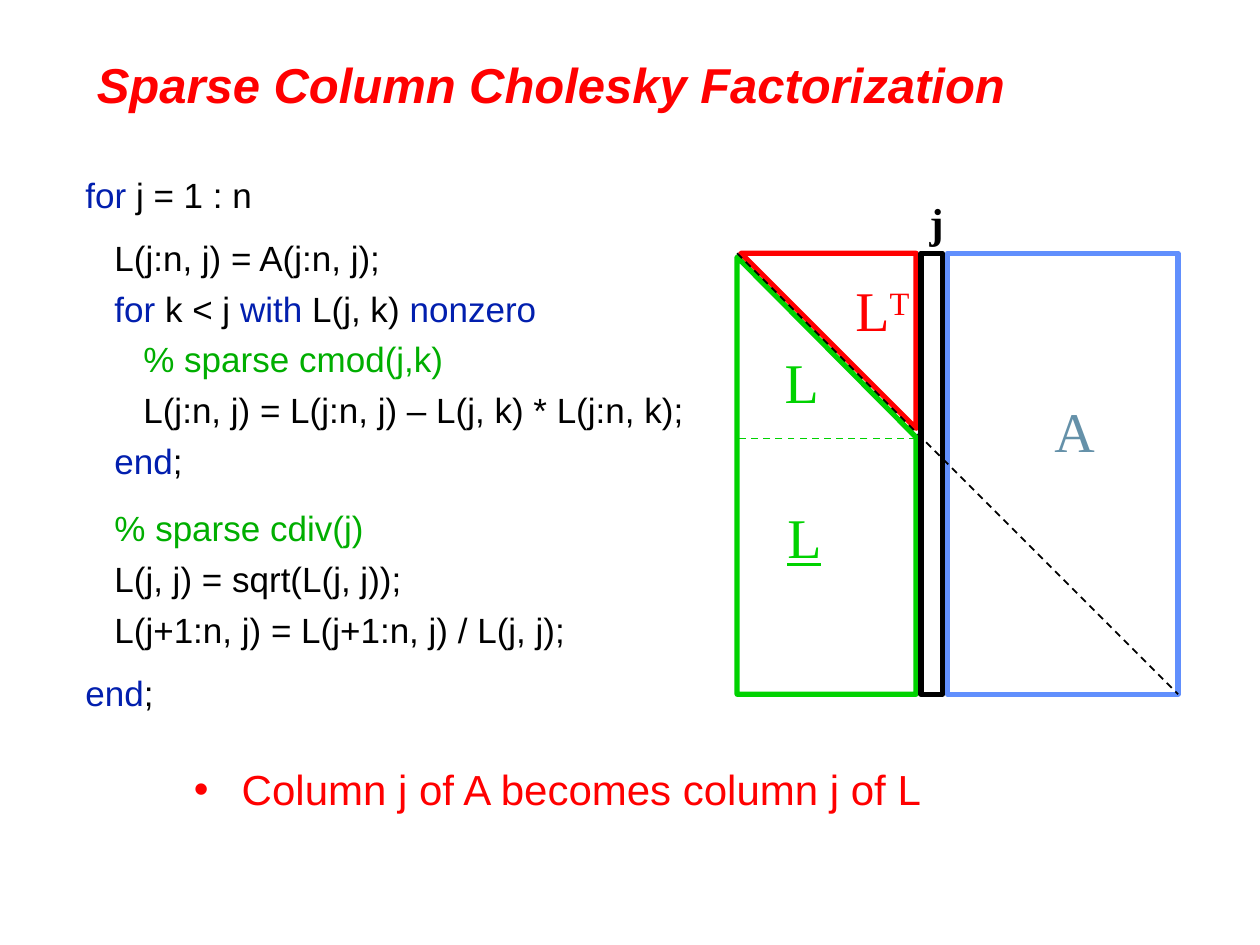
from dataclasses import dataclass

from lxml import etree
from pptx import Presentation
from pptx import util as u
from pptx.dml.color import RGBColor
from pptx.enum import dml, shapes, text
from pptx.oxml.ns import qn

# Grid of 100 columns by 75 rows; positions below are in these units.
WIDTH, HEIGHT = u.Inches(10), u.Inches(7.5)
COL, ROW = WIDTH // 100, HEIGHT // 75

BLACK, RED, BLUE = "000000", "FF0000", "021FAE"
COMMENT, GREEN, LIGHT_BLUE, GREY_BLUE = "00AE00", "00D200", "618FFD", "6591A9"
SANS, SERIF = "Arial", "Times New Roman"
INDENT = u.Inches(0.23)
HANGING = u.Inches(0.38)


@dataclass
class Run:
    text: str
    color: str = BLACK
    size: float = 20
    font: str = SANS
    bold: bool = False
    italic: bool = False
    underline: bool = False
    superscript: bool = False


@dataclass
class CodeLine:
    level: int
    runs: list[Run]
    before: float = 4.9


@dataclass
class Label:
    box: tuple[float, float, float, float]
    runs: list[Run]


def keyword(word: str) -> Run:
    return Run(word, BLUE)


def symbol(letter: str, color: str, **style) -> Run:
    return Run(letter, color, **{"size": 32, "font": SERIF, **style})


CODE = [
    CodeLine(0, [keyword("for"), Run(" j = 1 : n")], 3),
    CodeLine(1, [Run("L(j:n, j) = A(j:n, j);")], 12),
    CodeLine(1, [keyword("for"), Run(" k < j "), keyword("with"),
                 Run(" L(j, k) "), keyword("nonzero")]),
    CodeLine(2, [Run("% sparse cmod(j,k)", COMMENT)]),
    CodeLine(2, [Run("L(j:n, j) = L(j:n, j) – L(j, k) * L(j:n, k);")]),
    CodeLine(1, [keyword("end"), Run(";")]),
    CodeLine(1, [Run("% sparse cdiv(j)", COMMENT)], 14.7),
    CodeLine(1, [Run("L(j, j) = sqrt(L(j, j));")]),
    CodeLine(1, [Run("L(j+1:n, j) = L(j+1:n, j) / L(j, j);")]),
    CodeLine(0, [keyword("end"), Run(";")], 12),
]

LEFT, TOP, RIGHT, BOTTOM = 58.5, 20.1, 93.5, 55.1
FACTOR_RIGHT = 72.7

LABELS = [
    Label((61.5, 39.4, 4.7, 6.3), [symbol("L", GREEN, underline=True)]),
    Label((61.3, 27.1, 4.7, 6.3), [symbol("L", GREEN)]),
    Label((66.9, 21.4, 6.5, 6.3),
          [symbol("L", RED), symbol("T", RED, superscript=True)]),
    Label((82.7, 31, 5.2, 6.3), [symbol("A", GREY_BLUE)]),
    Label((72.8, 15.1, 3.1, 5), [symbol("j", BLACK, size=24, bold=True)]),
]


def rgb(color: str) -> RGBColor:
    return RGBColor.from_string(color)


def place(box: tuple[float, float, float, float]) -> list[int]:
    return [round(v * unit) for v, unit in zip(box, (COL, ROW, COL, ROW))]


def add_text_box(s, box, wrap: bool = True):
    tf = s.shapes.add_textbox(*place(box)).text_frame
    tf.word_wrap = wrap
    return tf


def fill_paragraph(p, runs: list[Run]) -> None:
    for item in runs:
        r = p.add_run()
        r.text = item.text
        f = r.font
        f.name, f.size = item.font, u.Pt(item.size)
        f.bold, f.italic, f.underline = item.bold, item.italic, item.underline
        f.color.rgb = rgb(item.color)
        if item.superscript:
            r._r.get_or_add_rPr().set("baseline", "30000")


def set_bullet(p, color: str) -> None:
    pPr = p._p.get_or_add_pPr()
    pPr.set("marL", str(HANGING))
    pPr.set("indent", str(-HANGING))
    bu_color = etree.SubElement(pPr, qn("a:buClr"))
    etree.SubElement(bu_color, qn("a:srgbClr")).set("val", color)
    etree.SubElement(pPr, qn("a:buFont")).set("typeface", SANS)
    etree.SubElement(pPr, qn("a:buChar")).set("char", "•")


def outline(sp, color: str) -> None:
    sp.shadow.inherit = False
    sp.fill.background()
    sp.line.color.rgb = rgb(color)
    sp.line.width = u.Pt(3)


def add_block(s, box, color: str) -> None:
    outline(s.shapes.add_shape(shapes.MSO_SHAPE.RECTANGLE, *place(box)), color)


def add_polygon(s, points: list[tuple[float, float]], color: str) -> None:
    start, *rest = [(round(x * COL), round(y * ROW)) for x, y in points]
    builder = s.shapes.build_freeform(*start)
    builder.add_line_segments(rest, close=True)
    outline(builder.convert_to_shape(), color)


def add_dashed_line(s, ends: tuple[float, float, float, float], color: str) -> None:
    line = s.shapes.add_connector(shapes.MSO_CONNECTOR.STRAIGHT, *place(ends))
    line.line.color.rgb = rgb(color)
    line.line.width = u.Pt(1)
    line.line.dash_style = dml.MSO_LINE.DASH
    etree.SubElement(line._element.spPr, qn("a:effectLst"))


def add_code(s) -> None:
    tf = add_text_box(s, (5.8, 13.3, 50, 51.7))
    for i, line in enumerate(CODE):
        p = tf.add_paragraph() if i else tf.paragraphs[0]
        p.space_before = u.Pt(line.before)
        p._p.get_or_add_pPr().set("marL", str(line.level * INDENT))
        fill_paragraph(p, line.runs)


def add_matrix(s) -> None:
    height = BOTTOM - TOP
    add_block(s, (75.2, TOP, RIGHT - 75.2, height), LIGHT_BLUE)
    add_polygon(s, [(LEFT, 20.4), (LEFT, BOTTOM), (FACTOR_RIGHT, BOTTOM),
                    (FACTOR_RIGHT, 34.7)], GREEN)
    add_polygon(s, [(58.8, TOP), (FACTOR_RIGHT, TOP), (FACTOR_RIGHT, 34)], RED)
    add_block(s, (73.1, TOP, 1.7, height), BLACK)
    add_dashed_line(s, (LEFT, TOP, RIGHT, BOTTOM), BLACK)
    add_dashed_line(s, (FACTOR_RIGHT, 34.8, LEFT, 34.8), GREEN)
    for label in LABELS:
        tf = add_text_box(s, label.box, wrap=False)
        tf.auto_size = text.MSO_AUTO_SIZE.SHAPE_TO_FIT_TEXT
        fill_paragraph(tf.paragraphs[0], label.runs)


def main() -> None:
    prs = Presentation()
    prs.slide_width, prs.slide_height = WIDTH, HEIGHT
    s = prs.slides.add_slide(prs.slide_layouts[6])

    title = add_text_box(s, (6.7, 3.3, 81.9, 6.7))
    title.vertical_anchor = text.MSO_ANCHOR.MIDDLE
    fill_paragraph(title.paragraphs[0],
                   [Run("Sparse Column Cholesky Factorization", RED, 28,
                        bold=True, italic=True)])
    add_code(s)

    p = add_text_box(s, (14.4, 60.1, 74.2, 12.9)).paragraphs[0]
    p.space_before = u.Pt(2)
    set_bullet(p, RED)
    fill_paragraph(p, [Run("Column j of A becomes column j of L", RED, 24)])

    add_matrix(s)
    prs.save("out.pptx")


if __name__ == "__main__":
    main()
